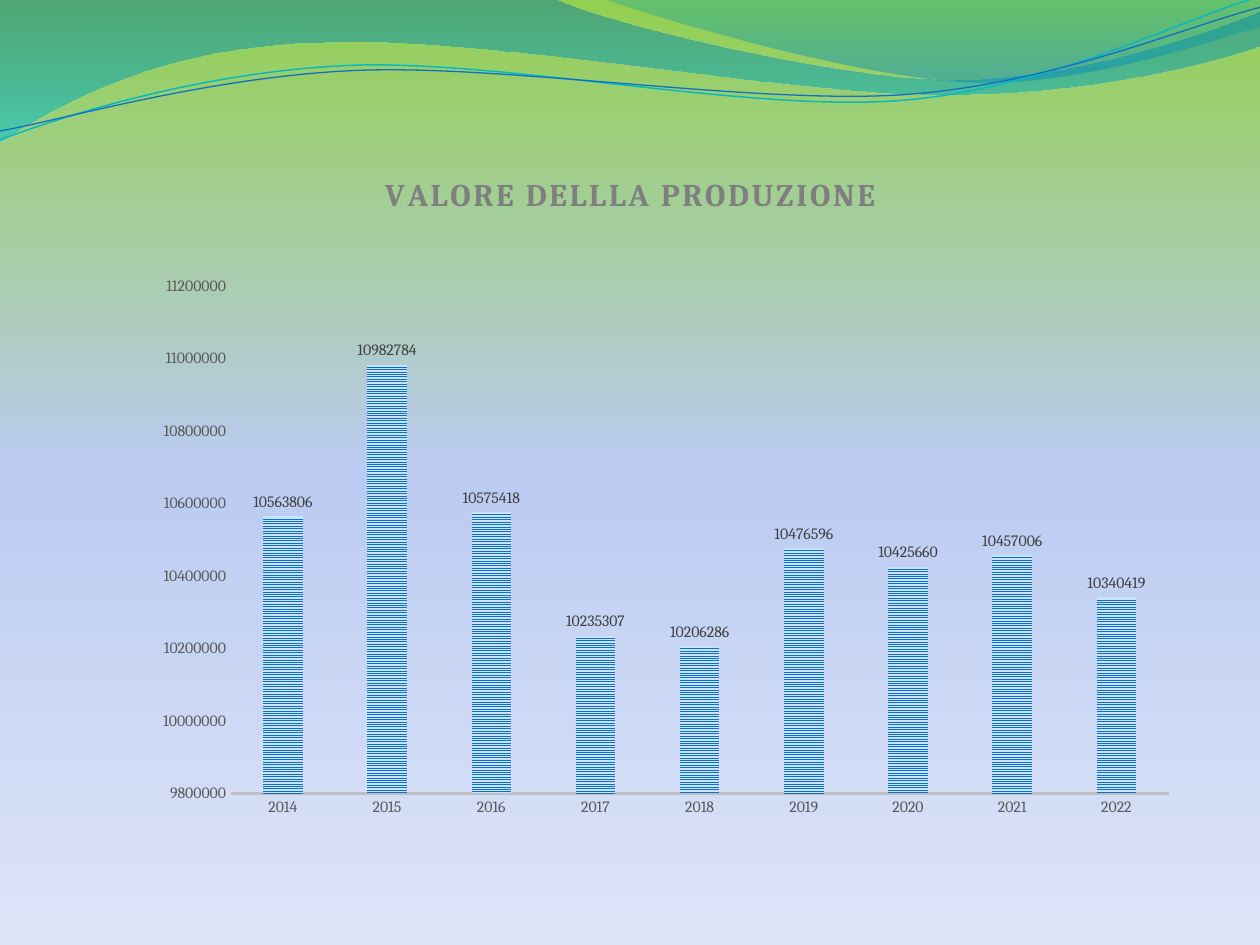
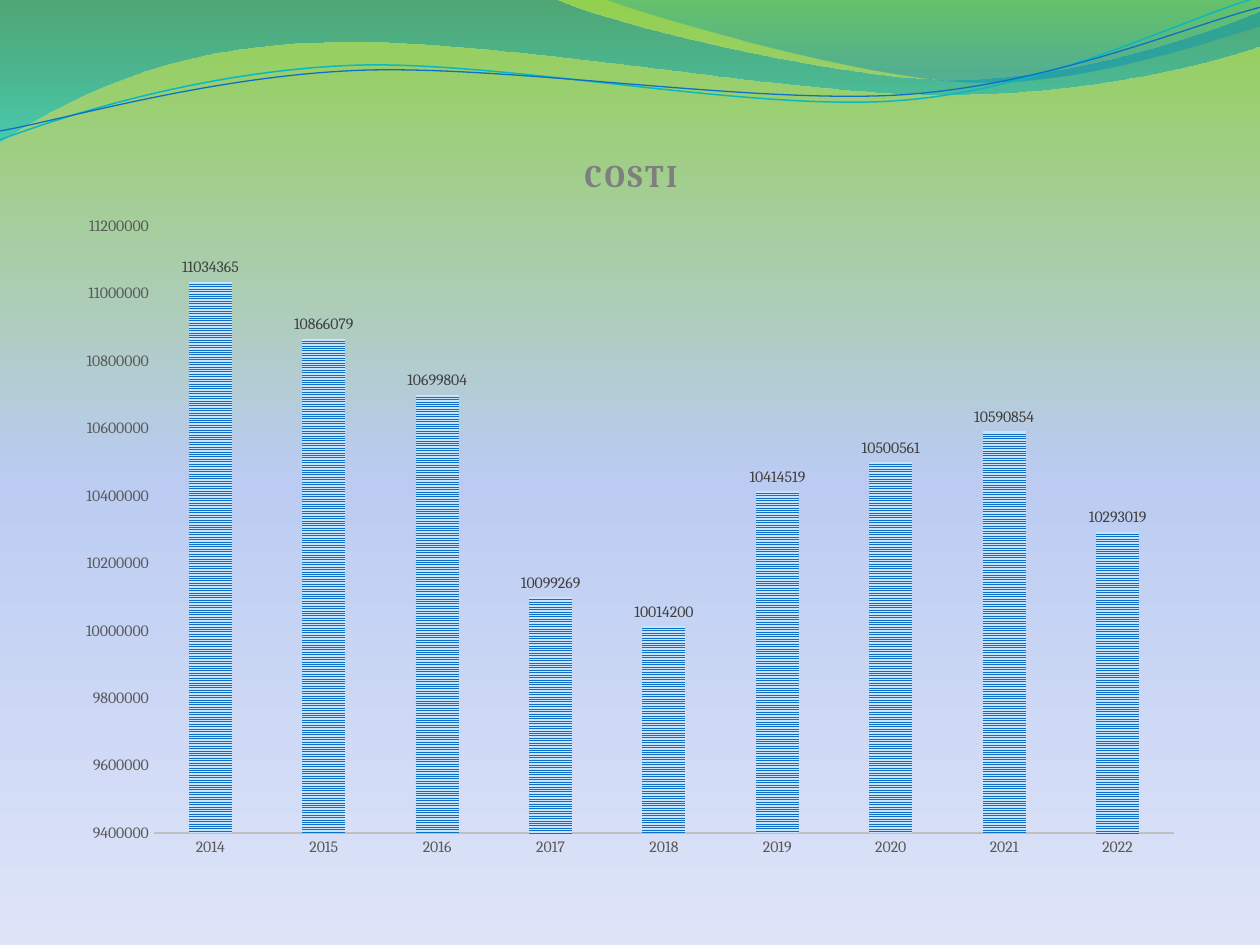
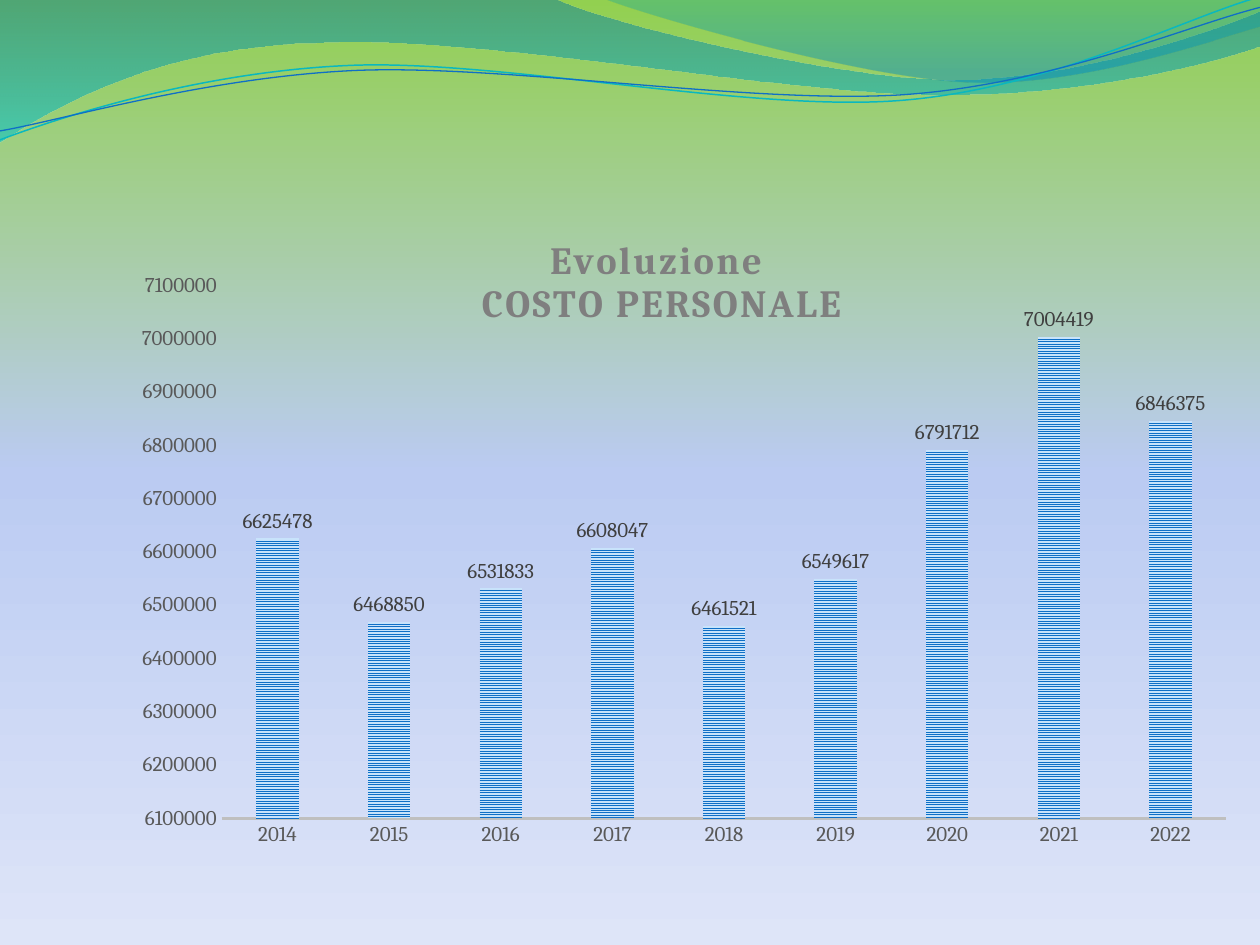
import pptx
import pptx.chart.data
import pptx.dml.color
import pptx.enum.chart
import pptx.enum.dml
import pptx.oxml
import pptx.oxml.ns
import pptx.util
from lxml import etree

Cm, Pt = pptx.util.Cm, pptx.util.Pt
RGBColor = pptx.dml.color.RGBColor
qn = pptx.oxml.ns.qn

# Shared look
FONT = "Cambria"
LIME = RGBColor(0x92, 0xD0, 0x50)
LILAC = RGBColor(0xBB, 0xCB, 0xF2)
PALE = RGBColor(0xDE, 0xE5, 0xF8)
DEEP = RGBColor(0x00, 0x74, 0xA1)
AQUA = RGBColor(0x00, 0xC6, 0xCF)
SEA = RGBColor(0x00, 0xA1, 0xA9)
AZURE = RGBColor(0x00, 0x8B, 0xBF)
TEAL = RGBColor(0x0A, 0xB8, 0xBF)
BLUE = RGBColor(0x0F, 0x6F, 0xC6)
ICE = RGBColor(0xC8, 0xE3, 0xFB)
GREY = RGBColor(0x7F, 0x7F, 0x7F)
SLATE = RGBColor(0x59, 0x59, 0x59)
DARK = RGBColor(0x40, 0x40, 0x40)
SILVER = RGBColor(0xBF, 0xBF, 0xBF)

# Waves in cm: start point, then lines (x, y) and curves (two controls, end),
# gradient stops (position, colour, opacity) or a line (colour, width)
WAVES = [
    ((0, -0.03),
     [(11.18, -0.03), (12.09, 0.43, 16.87, 1.6, 19.25, 1.6),
      (21.67, 1.6, 24.33, 0.66, 25.4, 0.23), (25.43, 0.91),
      (24.97, 1.12, 22.1, 1.93, 18.95, 1.91),
      (15.8, 1.91, 9.7, 0.71, 6.53, 0.86),
      (3.28, 0.89, 1.17, 2.11, -0.03, 2.87)],
     [(0, DEEP, 45), (100, AQUA, 55)], None),
    ((12.17, -0.03),
     [(12.93, 0.28, 17.32, 1.57, 19.53, 1.65),
      (21.74, 1.75, 24.41, 0.81, 25.4, 0.53), (25.4, 0)],
     [(0, SEA, 30), (80, AZURE, 45)], None),
    ((0, 2.82),
     [(1.22, 2.36, 4.01, 1.45, 7.04, 1.32),
      (10.03, 1.19, 15.06, 2.26, 18.11, 2.03),
      (21.16, 1.8, 23.83, 0.38, 25.35, -0.05)],
     None, (TEAL, 0.85)),
    ((0, 2.64),
     [(1.19, 2.44, 4.17, 1.55, 7.19, 1.42),
      (10.24, 1.3, 15.16, 2.11, 18.21, 1.91),
      (21.23, 1.7, 23.9, 0.53, 25.4, 0.15)],
     None, (BLUE, 0.75)),
]

# One entry per slide; "spot" and "plot" are percentages of the chart frame
YEARS = [str(year) for year in range(2014, 2023)]
PAGES = [
    dict(title="VALORE DELLLA PRODUZIONE", size=18, small=9,
         frame=(1.27, 2.92, 22.86, 14.66), spot=(27.9, 3.2),
         plot=(14.8, 19.4, 82.7, 69.8), scale=(9800000, 11200000, 200000),
         vals=[10563806, 10982784, 10575418, 10235307, 10206286,
               10476596, 10425660, 10457006, 10340419]),
    dict(title="COSTI", size=18, small=9,
         frame=(1.27, 2.51, 22.86, 15.04), spot=(45.5, 3.3),
         plot=(8, 13.6, 90, 81.4), scale=(9400000, 11200000, 200000),
         vals=[11034365, 10866079, 10699804, 10099269, 10014200,
               10414519, 10500561, 10590854, 10293019]),
    dict(title="Evoluzione \nCOSTO PERSONALE", size=22, small=12,
         frame=(1.91, 4.33, 22.86, 13.23), spot=(33.8, 2.9),
         plot=(11.2, 10.8, 88.6, 81.2), scale=(6100000, 7100000, 100000),
         vals=[6625478, 6468850, 6531833, 6608047, 6461521,
               6549617, 6791712, 7004419, 6846375]),
]


def write(frame, text, size=18, color=GREY, bold=True, space=1.5):
    for num, line in enumerate(text.split("\n")):
        para = frame.add_paragraph() if num else frame.paragraphs[0]
        run = para.add_run()
        run.text = line
        run.font.name, run.font.size, run.font.bold = FONT, Pt(size), bold
        run.font.color.rgb = color
        run.font._element.set("spc", str(int(space * 100)))


def blend(fill, stops):
    fill.gradient()
    grad = fill._xPr.find(qn("a:gradFill"))
    grad.find(qn("a:lin")).set("ang", "5400000")
    items = grad.find(qn("a:gsLst"))
    for old in list(items):
        items.remove(old)
    for pos, color, alpha in stops:
        stop = etree.SubElement(items, qn("a:gs"), pos=str(pos * 1000))
        tint = etree.SubElement(stop, qn("a:srgbClr"), val=str(color))
        etree.SubElement(tint, qn("a:alpha"), val=str(alpha * 1000))


deck = pptx.Presentation()
deck.slide_width, deck.slide_height = Cm(25.4), Cm(19.05)
master = deck.slide_master
blend(master.background.fill,
      [(0, LIME, 100), (50, LILAC, 100), (100, PALE, 100)])
slides = [deck.slides.add_slide(deck.slide_layouts[6]) for page in PAGES]

# Waves along the top, drawn once and moved to the master
for num, (start, parts, stops, line) in enumerate(WAVES):
    dots = [(Cm(part[i]), Cm(part[i + 1]))
            for part in parts for i in range(0, len(part), 2)]
    pen = slides[0].shapes.build_freeform(Cm(start[0]), Cm(start[1]))
    pen.add_line_segments(dots, close=bool(stops))
    wave = pen.convert_to_shape()
    wave.shadow.inherit = False
    if stops:
        blend(wave.fill, stops)
        wave.line.fill.background()
    else:
        wave.fill.background()
        wave.line.color.rgb, wave.line.width = line[0], Pt(line[1])

    # Join each curve's three points into one Bezier segment
    legs = iter(list(wave._element.iter(qn("a:lnTo"))))
    for part in parts:
        leg = next(legs)
        if len(part) == 6:
            curve = etree.Element(qn("a:cubicBezTo"))
            leg.addprevious(curve)
            for piece in (leg, next(legs), next(legs)):
                curve.append(piece[0])
                piece.getparent().remove(piece)
    wave._element.nvSpPr.cNvPr.set("id", str(50 + num))
    master.shapes._spTree.append(wave._element)

for slide, page in zip(slides, PAGES):
    # Column chart
    data = pptx.chart.data.CategoryChartData()
    data.categories = YEARS
    data.add_series("Series 1", page["vals"])
    chart = slide.shapes.add_chart(pptx.enum.chart.XL_CHART_TYPE.COLUMN_CLUSTERED,
                                   *map(Cm, page["frame"]), data).chart
    chart.has_legend = False
    chart.font.name, chart.font.size = FONT, Pt(10)
    write(chart.chart_title.text_frame, page["title"], size=page["size"])

    # Columns and their values
    plot = chart.plots[0]
    plot.gap_width, plot.overlap, plot.vary_by_categories = 164, -22, False
    fill = plot.series[0].format.fill
    fill.patterned()
    fill.pattern = pptx.enum.dml.MSO_PATTERN.NARROW_HORIZONTAL
    fill.fore_color.rgb, fill.back_color.rgb = BLUE, ICE
    plot.has_data_labels = True
    tags = plot.data_labels
    tags.show_value = True
    tags.position = pptx.enum.chart.XL_LABEL_POSITION.OUTSIDE_END

    # Axes
    years, sums = chart.category_axis, chart.value_axis
    sums.minimum_scale, sums.maximum_scale, sums.major_unit = page["scale"]
    sums.has_major_gridlines = False
    sums.format.line.fill.background()
    years.format.line.color.rgb, years.format.line.width = SILVER, Pt(1.5)
    for axis in (years, sums):
        axis.major_tick_mark = axis.minor_tick_mark = pptx.enum.chart.XL_TICK_MARK.NONE
    for font, color in ((years.tick_labels.font, SLATE), (sums.tick_labels.font, SLATE),
                        (tags.font, DARK)):
        font.name, font.size, font.color.rgb = FONT, Pt(page["small"]), color

    # Places of title and plot area
    for host, index, box in ((chart.chart_title._element, 1, page["spot"]),
                             (plot._element.getparent(), 0, page["plot"])):
        for old in host.findall(qn("c:layout")):
            host.remove(old)
        layout = pptx.oxml.parse_xml("<c:layout %s/>" % pptx.oxml.ns.nsdecls("c"))
        host.insert(index, layout)
        manual = etree.SubElement(layout, qn("c:manualLayout"))
        if len(box) == 4:
            etree.SubElement(manual, qn("c:layoutTarget"), val="inner")
        for mode in ("c:xMode", "c:yMode"):
            etree.SubElement(manual, qn(mode), val="edge")
        for key, part in zip("xywh", box):
            etree.SubElement(manual, qn("c:" + key), val=str(part / 100))

deck.save("out.pptx")
